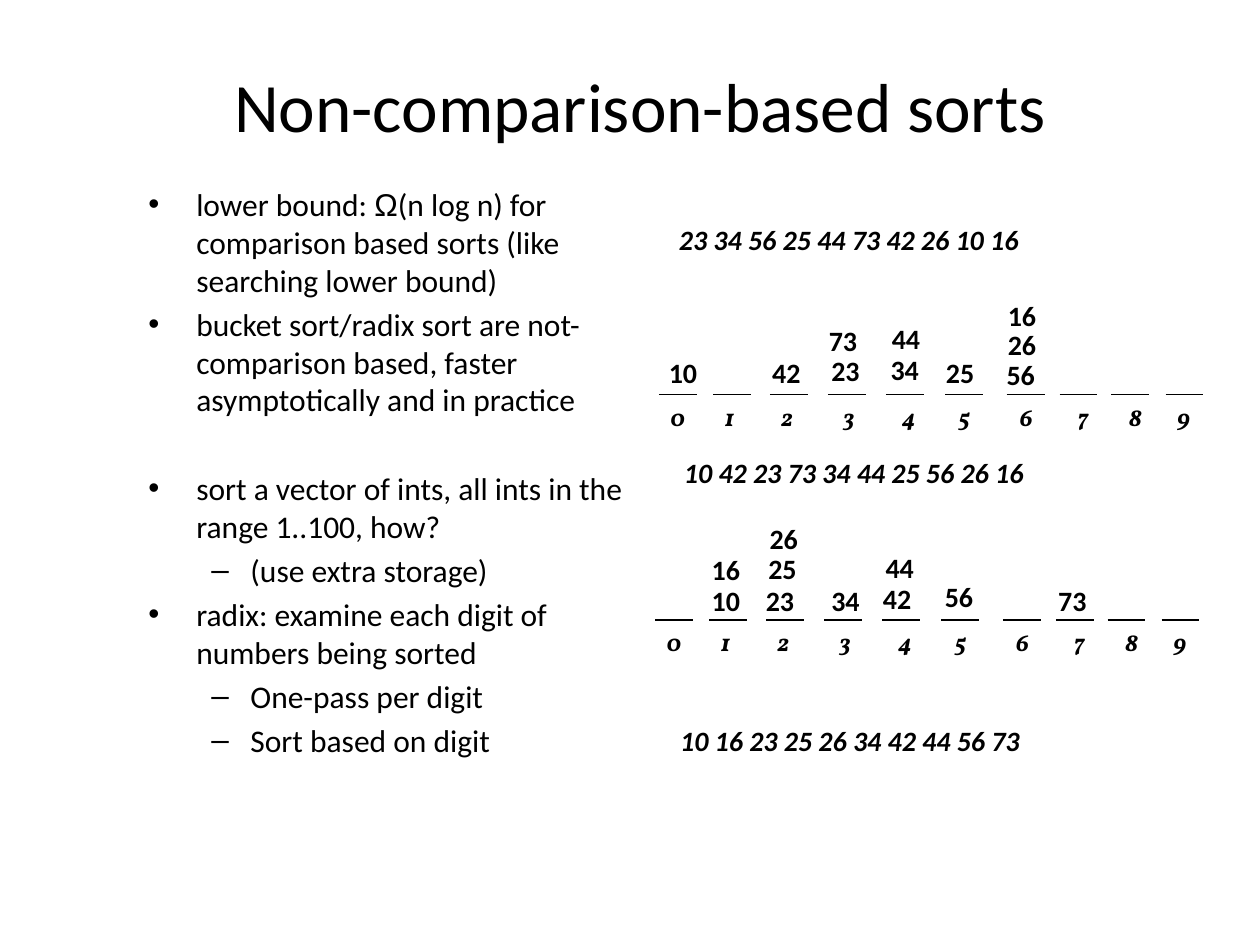
from lxml.etree import SubElement as Sub
from pptx import Presentation
from pptx.dml.color import RGBColor as RGB
from pptx.enum.shapes import MSO_CONNECTOR as Conn
from pptx.enum.text import MSO_ANCHOR as Anchor, MSO_AUTO_SIZE as Auto, PP_ALIGN as Align
from pptx.oxml.ns import qn
from pptx.util import Emu, Pt

SCALE = 9144  # EMU in one px, 100 px to the inch
INK = "000000"

TITLE = {"name": "Calibri", "size": Pt(39.6)}
BODY = {"name": "Calibri", "size": Pt(18)}
NUM = {"name": "Calibri", "size": Pt(16), "bold": True}
LIST = {**NUM, "italic": True}
DIGIT = {"name": "Vollkorn", "size": Pt(14), "bold": True, "italic": True}

# Bullet mark, left margin and hanging indent for each level
LEVELS = [("•", 38, 38), ("–", 81, 31)]
# Level, space before in points, text runs
POINTS = [
    (0, 3.6, ["lower bound: ", "Ω",
              "(n log n) for comparison based sorts (like searching lower bound)"]),
    (0, 3.6, ["bucket sort/radix sort are not-comparison based, "
              "faster asymptotically and in practice"]),
    (0, 29, ["sort a vector of ints, all ints in the range 1..100, how?"]),
    (1, 3.6, ["(use extra storage)"]),
    (0, 3.6, ["radix: examine each digit of numbers being sorted"]),
    (1, 3.6, ["One-pass per digit"]),
    (1, 3.6, ["Sort based on digit"]),
]

# Left edges of the ten buckets and their digits, from the row's left
SLOTS = [0, 43, 88, 134, 180, 227, 276, 318, 359, 402]
TAGS = [-1, 42, 87, 136, 183, 228, 276, 322, 363, 401]
ROWS = [(523, 313), (520, 492)]

LISTS = [
    (529, 172, "23 34 56 25 44 73 42 26 10 16"),
    (533, 357, "10 42 23 73 34 44 25 56 26 16"),
    (530, 569, "10 16 23 25 26 34 42 44 56 73"),
]
NUMS = [
    # by last digit
    (521, 277, "10"), (603, 277, "42"),
    (650, 276, "23"), (648, 252, "73"),
    (697, 275, "34"), (698, 250, "44"),
    (741, 277, "25"),
    (789, 279, "56"), (790, 255, "26"), (790, 232, "16"),
    # by first digit
    (555, 458, "10"), (555, 434, "16"),
    (598, 458, "23"), (600, 433, "25"), (601, 409, "26"),
    (650, 458, "34"),
    (691, 457, "42"), (693, 432, "44"),
    (740, 455, "56"), (830, 458, "73"),
]


def px(*vals):
    return [Emu(v * SCALE) for v in vals]


def color(code):
    return RGB.from_string(code)


def put(obj, form):
    for key, val in form.items():
        setattr(obj, key, val)


class Deck:
    def __init__(self, wide, high):
        self.file = Presentation()
        self.file.slide_width, self.file.slide_height = px(wide, high)
        self.slide = self.file.slides.add_slide(self.file.slide_layouts[6])
        self.ink = color(INK)

    def run(self, para, text, form):
        run = para.add_run()
        run.text = text
        put(run.font, form)
        run.font.color.rgb = self.ink

    def title(self, box, text):
        frame = self.slide.shapes.add_textbox(*px(*box)).text_frame
        put(frame, {"word_wrap": True, "vertical_anchor": Anchor.MIDDLE})
        para = frame.paragraphs[0]
        para.alignment = Align.CENTER
        self.run(para, text, TITLE)

    def label(self, box, text, form, home=None):
        home = home or self.slide.shapes
        frame = home.add_textbox(*px(*box)).text_frame
        put(frame, {"word_wrap": False, "auto_size": Auto.SHAPE_TO_FIT_TEXT})
        self.run(frame.paragraphs[0], text, form)

    def line(self, ends, home):
        line = home.add_connector(Conn.STRAIGHT, *px(*ends))
        line.line.color.rgb = self.ink
        line.line.width = Pt(1)
        Sub(line._element.spPr, qn("a:effectLst"))

    def bullets(self, box, points):
        frame = self.slide.shapes.add_textbox(*px(*box)).text_frame
        frame.word_wrap = True
        for i, (level, gap, runs) in enumerate(points):
            para = frame.add_paragraph() if i else frame.paragraphs[0]
            put(para, {"level": level, "space_before": Pt(gap)})
            mark, left, hang = LEVELS[level]
            props = para._p.get_or_add_pPr()
            for key, val in zip(("marL", "indent"), px(left, -hang)):
                props.set(key, str(val))
            Sub(props, qn("a:buFont"), typeface="Arial")
            Sub(props, qn("a:buChar"), char=mark)
            for text in runs:
                name = "Arial" if text == "Ω" else "Calibri"
                self.run(para, text, {**BODY, "name": name})

    def row(self, left, top):
        """Draw ten buckets with their digits as one group."""
        home = self.slide.shapes.add_group_shape().shapes
        for x in SLOTS:
            self.line((left + x, top, left + x + 30, top), home)
        for i, x in enumerate(TAGS):
            self.label((left + x, top + 1, 30, 33), str(i), DIGIT, home)


def main():
    deck = Deck(1000, 750)
    deck.title((83, 50, 850, 67), "Non-comparison-based sorts")
    deck.bullets((108, 142, 417, 492), POINTS)
    for left, top in ROWS:
        deck.row(left, top)
    for items, wide, form in ((LISTS, 407, LIST), (NUMS, 47, NUM)):
        for x, y, text in items:
            deck.label((x, y, wide, 36), text, form)
    deck.file.save("out.pptx")


if __name__ == "__main__":
    main()
